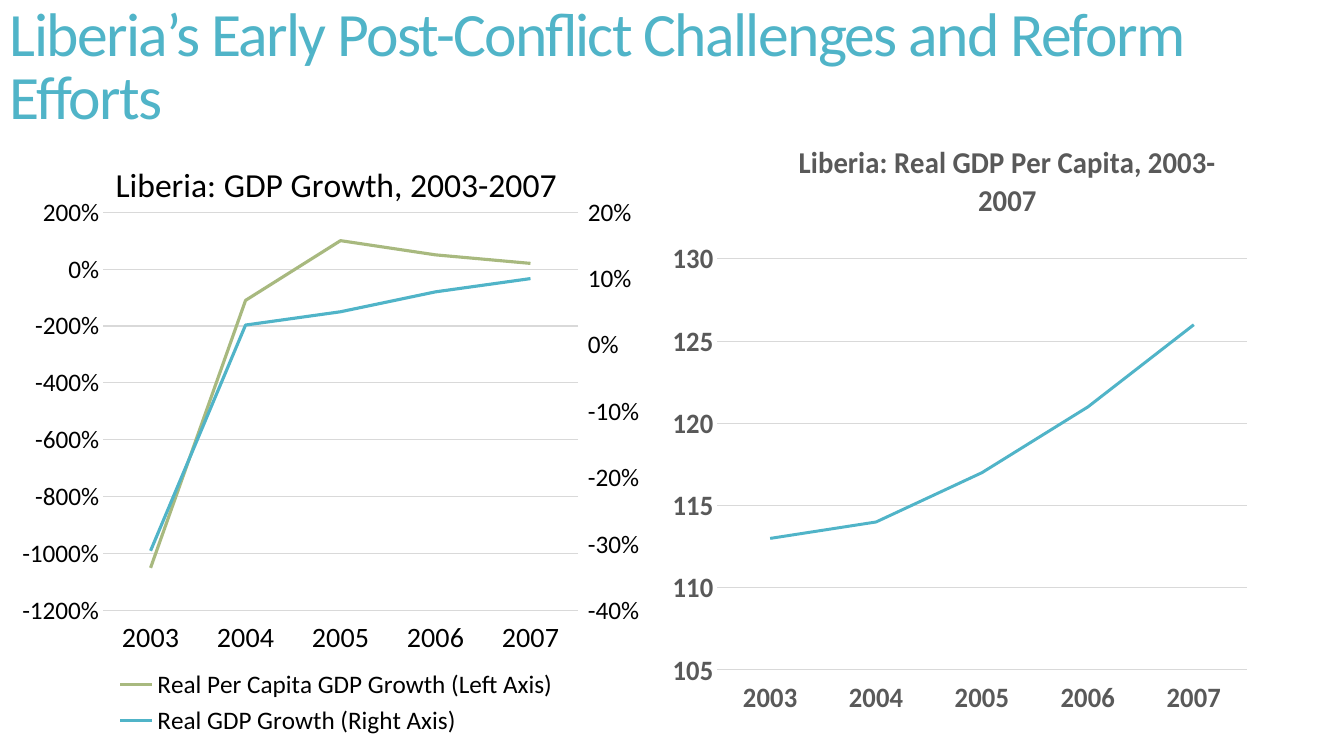
from copy import deepcopy
from dataclasses import dataclass

from lxml.etree import SubElement
from pptx import Presentation
from pptx.chart.axis import ValueAxis
from pptx.chart.data import CategoryChartData
from pptx.dml.color import RGBColor
from pptx.enum.chart import (XL_AXIS_CROSSES, XL_CHART_TYPE, XL_LEGEND_POSITION,
                             XL_TICK_LABEL_POSITION, XL_TICK_MARK)
from pptx.enum.text import MSO_ANCHOR
from pptx.oxml.ns import qn
from pptx.util import Inches, Pt


@dataclass(frozen=True)
class Theme:
    font: str = "Calibri"
    teal: str = "50B4C8"
    green: str = "A8B97F"
    black: str = "000000"
    gray: str = "595959"
    grid: str = "D9D9D9"
    heading: float = 44
    chart_title: float = 24
    bold_chart_title: float = 21.6
    category: float = 20
    value: float = 18
    grid_width: float = 0.75
    series_width: float = 2.25


THEME = Theme()
YEARS = ["2003", "2004", "2005", "2006", "2007"]


def write(frame, text, size, color, bold=False, line_spacing=None, tracking=None):
    """Fill a text frame with one formatted paragraph; tracking is in points."""
    paragraph = frame.paragraphs[0]
    paragraph.line_spacing = line_spacing
    run = paragraph.add_run()
    run.text = text
    run.font.name, run.font.size, run.font.bold = THEME.font, Pt(size), bold
    run.font.color.rgb = RGBColor.from_string(color)
    if tracking is not None:
        run.font._element.set("spc", str(round(tracking * 100)))


def add_line_chart(slide, box, title, series, plot, scale, number_format,
                   title_size, value_size, color, bold):
    """Add a line chart; plot is the inner plot area as fractions of the chart."""
    data = CategoryChartData()
    data.categories = YEARS
    for name, values, _ in series:
        data.add_series(name, values)
    chart = slide.shapes.add_chart(
        XL_CHART_TYPE.LINE, *[Inches(length) for length in box], data).chart
    chart.has_legend = False
    chart.has_title = True
    write(chart.chart_title.text_frame, title, title_size, color, bold)
    chart.chart_title.include_in_layout = False
    chart.plots[0].vary_by_categories = False
    for line, (_, _, line_color) in zip(chart.plots[0].series, series):
        line.smooth = False
        line.format.line.width = Pt(THEME.series_width)
        line.format.line.color.rgb = RGBColor.from_string(line_color)

    years, amounts = chart.category_axis, chart.value_axis
    for axis, size in ((years, THEME.category), (amounts, value_size)):
        axis.major_tick_mark = axis.minor_tick_mark = XL_TICK_MARK.NONE
        font = axis.tick_labels.font
        font.name, font.size, font.bold = THEME.font, Pt(size), bold
        font.color.rgb = RGBColor.from_string(color)
    years.tick_label_position = XL_TICK_LABEL_POSITION.LOW
    years.has_major_gridlines = False
    amounts.has_major_gridlines = True
    for grid_line in (years.format.line, amounts.major_gridlines.format.line):
        grid_line.width = Pt(THEME.grid_width)
        grid_line.color.rgb = RGBColor.from_string(THEME.grid)
    amounts.format.line.fill.background()
    amounts.minimum_scale, amounts.maximum_scale, amounts.major_unit = scale
    amounts.tick_labels.number_format = number_format
    amounts.tick_labels.number_format_is_linked = False

    plot_area = chart._chartSpace.chart.plotArea
    for old_layout in plot_area.findall(qn("c:layout")):
        plot_area.remove(old_layout)
    layout = SubElement(plot_area, qn("c:layout"))
    plot_area.insert(0, layout)
    manual = SubElement(layout, qn("c:manualLayout"))
    settings = [("layoutTarget", "inner"), ("xMode", "edge"), ("yMode", "edge"),
                *zip("xywh", plot)]
    for tag, setting in settings:
        SubElement(manual, qn(f"c:{tag}")).set("val", str(setting))
    return chart


prs = Presentation()
prs.slide_width, prs.slide_height = Inches(13.33), Inches(7.5)
slide = prs.slides.add_slide(prs.slide_layouts[6])

heading = slide.shapes.add_textbox(0, 0, prs.slide_width, Inches(1.37)).text_frame
heading.word_wrap = True
heading.vertical_anchor = MSO_ANCHOR.MIDDLE
write(heading, "Liberia’s Early Post-Conflict Challenges and Reform Efforts",
      THEME.heading, THEME.teal, line_spacing=0.85, tracking=-1.2)

# GDP growth, with the second series on a right-hand axis
growth = add_line_chart(
    slide, (0.05, 1.37, 6.57, 5.98), "Liberia: GDP Growth, 2003-2007",
    [("Real Per Capita GDP Growth (Left Axis)", (-10.5, -1.1, 1, 0.5, 0.2), THEME.green),
     ("Real GDP Growth (Right Axis)", (-0.31, 0.03, 0.05, 0.08, 0.1), THEME.teal)],
    plot=(0.148, 0.123, 0.717, 0.661), scale=(-12, 2, 2), number_format="0%",
    title_size=THEME.chart_title, value_size=THEME.value,
    color=THEME.black, bold=False)
growth.has_legend = True
growth.legend.position = XL_LEGEND_POSITION.BOTTOM
growth.legend.include_in_layout = False
legend_font = growth.legend.font
legend_font.name, legend_font.size = THEME.font, Pt(THEME.value)
legend_font.color.rgb = RGBColor.from_string(THEME.black)

plot_area = growth._chartSpace.chart.plotArea
left_lines = plot_area.find(qn("c:lineChart"))
left_years = plot_area.find(qn("c:catAx"))
left_amounts = plot_area.find(qn("c:valAx"))
right_lines, right_years, right_amounts = map(
    deepcopy, (left_lines, left_years, left_amounts))
left_lines.remove(left_lines.findall(qn("c:ser"))[1])
right_lines.remove(right_lines.findall(qn("c:ser"))[0])
left_lines.addnext(right_lines)
left_amounts.addnext(right_amounts)
right_amounts.addnext(right_years)

YEARS_ID, AMOUNTS_ID = "50010", "50020"
for reference, axis_id in zip(right_lines.findall(qn("c:axId")), (YEARS_ID, AMOUNTS_ID)):
    reference.set("val", axis_id)
for axis, own_id, cross_id in ((right_years, YEARS_ID, AMOUNTS_ID),
                               (right_amounts, AMOUNTS_ID, YEARS_ID)):
    axis.find(qn("c:axId")).set("val", own_id)
    axis.find(qn("c:crossAx")).set("val", cross_id)
right_years.find(qn("c:delete")).set("val", "1")
right_amounts.find(qn("c:axPos")).set("val", "r")
right_amounts.find(qn("c:crosses")).set("val", "max")
right_axis = ValueAxis(right_amounts)
right_axis.has_major_gridlines = False
right_axis.major_tick_mark = XL_TICK_MARK.OUTSIDE
right_axis.minimum_scale, right_axis.maximum_scale = -0.4, 0.2
right_axis.major_unit = 0.1

# GDP per capita, with its values on the right
per_capita = add_line_chart(
    slide, (6.67, 1.17, 6.32, 5.98), "Liberia: Real GDP Per Capita, 2003-2007",
    [("Series 1", (113, 114, 117, 121, 126), THEME.teal)],
    plot=(0.02, 0.234, 0.876, 0.682), scale=(105, 130, 5), number_format="0",
    title_size=THEME.bold_chart_title, value_size=THEME.category,
    color=THEME.gray, bold=True)
per_capita.category_axis.crosses = XL_AXIS_CROSSES.MAXIMUM

prs.save("out.pptx")
